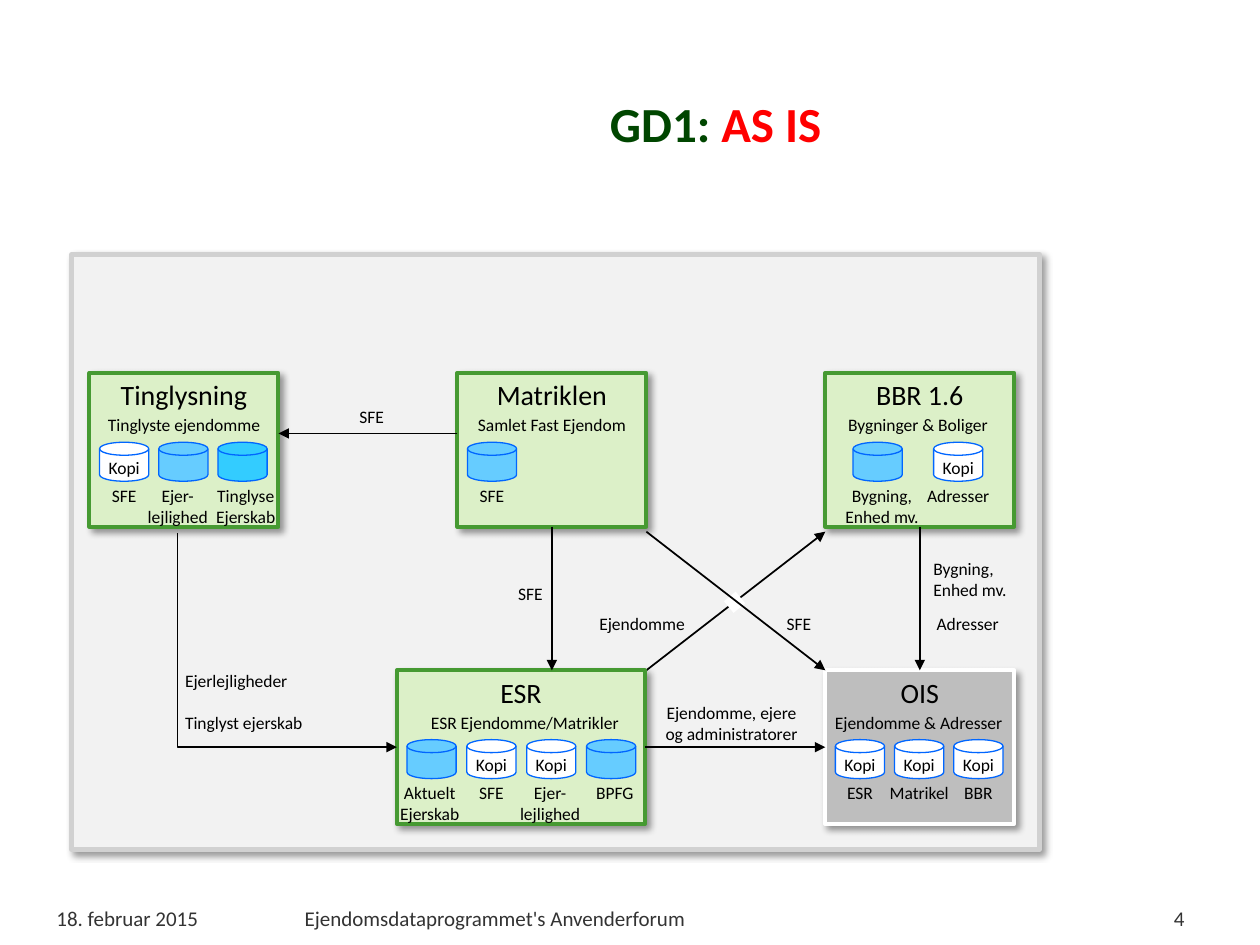
from dataclasses import dataclass
from typing import Any, Optional

import pptx
import pptx.dml.color
import pptx.enum.shapes
import pptx.enum.text
import pptx.oxml
import pptx.oxml.ns
import pptx.util
from lxml import etree

COLORS = {
    "black": "000000", "white": "FFFFFF", "panel": "F2F2F2", "panel_edge": "D1D1D1",
    "green": "DCF0C8", "green_edge": "469A32", "gray": "BEBEBE", "blue": "66CCFF",
    "cyan": "33CCFF", "store_edge": "0066FF", "title": "004600", "red": "FF0000",
    "footer": "333333",
}
COLUMNS, ROWS = 100, 75
SHAPE = pptx.enum.shapes.MSO_SHAPE
ALIGN = pptx.enum.text.PP_ALIGN
ANCHOR = pptx.enum.text.MSO_ANCHOR
qn = pptx.oxml.ns.qn

presentation = pptx.Presentation()
presentation.slide_width = pptx.util.Inches(10)
presentation.slide_height = pptx.util.Inches(7.5)
slide = presentation.slides.add_slide(presentation.slide_layouts[6])


@dataclass
class Store:
    label: str
    width: float
    fill: str = "white"
    shift: float = 0


@dataclass
class System:
    name: str
    subtitle: str
    column: float
    row: float
    subtitle_width: float
    stores: list[Store]
    width: float = 15
    first: float = 2.75
    pitch: float = 4.7
    subtitle_shift: float = 0
    fill: str = "green"
    edge: str = "green_edge"


@dataclass
class Label:
    text: str
    column: float
    row: float
    width: float
    align: Any = ALIGN.CENTER
    gap: float = 0


@dataclass
class Flow:
    begin: tuple[float, float]
    end: tuple[float, float]
    source: Optional[tuple[str, int]] = None
    target: Optional[tuple[str, int]] = None


def x(columns: float) -> int:
    return round(presentation.slide_width * columns / COLUMNS)


def y(rows: float) -> int:
    return round(presentation.slide_height * rows / ROWS)


def rgb(name: str) -> pptx.dml.color.RGBColor:
    return pptx.dml.color.RGBColor.from_string(COLORS[name])


def apply_format(target: Any, values: dict[str, Any]) -> None:
    for name, value in values.items():
        setattr(target, name, value)


def write(shape: Any, text: str, size: float = 10, color: str = "black",
          align: Any = ALIGN.CENTER, bold: bool = False, gap: float = 0) -> None:
    for index, line in enumerate(text.split("\n")):
        frame = shape.text_frame
        paragraph = frame.add_paragraph() if index else frame.paragraphs[0]
        paragraph.alignment = align
        if index and gap:
            paragraph.space_before = pptx.util.Pt(gap)
        add_run(paragraph, line, size, color, bold)


def add_run(paragraph: Any, text: str, size: float, color: str, bold: bool) -> None:
    run = paragraph.add_run()
    run.text = text
    apply_format(run.font, {"name": "Calibri", "size": pptx.util.Pt(size), "bold": bold})
    run.font.color.rgb = rgb(color)


def add_box(kind: Any, column: float, row: float, width: float, height: float, fill: str,
            edge: Optional[str] = None, weight: float = 0, shadow: bool = False) -> Any:
    shape = slide.shapes.add_shape(kind, x(column), y(row), x(width), y(height))
    shape.fill.solid()
    shape.fill.fore_color.rgb = rgb(fill)
    if edge:
        shape.line.color.rgb = rgb(edge)
        shape.line.width = pptx.util.Pt(weight)
    else:
        shape.line.fill.background()
    shape.shadow.inherit = False
    if shadow:
        effects = shape.element.spPr.find(qn("a:effectLst"))
        outer = etree.SubElement(effects, qn("a:outerShdw"), blurRad="50800", dist="38100",
                                 dir="2700000", algn="tl", rotWithShape="0")
        color = etree.SubElement(outer, qn("a:srgbClr"), val=COLORS["black"])
        etree.SubElement(color, qn("a:alpha"), val="40000")
    apply_format(shape.text_frame, {
        "word_wrap": False, "margin_left": 0, "margin_right": 0, "margin_bottom": 0,
        "margin_top": y(0.4), "vertical_anchor": ANCHOR.TOP})
    return shape


def add_text(column: float, row: float, width: float, height: float, wrap: bool = False) -> Any:
    shape = slide.shapes.add_textbox(x(column), y(row), x(width), y(height))
    shape.text_frame.word_wrap = wrap
    return shape


def draw_label(label: Label) -> None:
    lines = label.text.count("\n") + 1
    height = 1 + 1.7 * (lines + bool(label.gap))
    shape = add_text(label.column, label.row, label.width, height)
    shape.text_frame.auto_size = pptx.enum.text.MSO_AUTO_SIZE.SHAPE_TO_FIT_TEXT
    write(shape, label.text, align=label.align, gap=label.gap)


def draw_system(system: System) -> Any:
    box = add_box(SHAPE.RECTANGLE, system.column, system.row, system.width, 12.2,
                  system.fill, system.edge, 2.25, True)
    write(box, system.name, 16)
    middle = system.column + system.width / 2 + system.subtitle_shift
    draw_label(Label(system.subtitle, middle - system.subtitle_width / 2, system.row + 2.8,
                     system.subtitle_width))
    for index, store in enumerate(system.stores):
        center = system.column + system.first + index * system.pitch
        disk = add_box(SHAPE.FLOWCHART_MAGNETIC_DISK, center - 1.95, system.row + 5.5, 3.9, 3.1,
                       store.fill, "store_edge", 0.75)
        if store.fill == "white":
            disk.text_frame.vertical_anchor = ANCHOR.MIDDLE
            write(disk, "Kopi")
        draw_label(Label(store.label, center + store.shift - store.width / 2,
                         system.row + 8.4, store.width))
    return box


def style_arrow(connector: Any) -> None:
    connector.line.color.rgb = rgb("black")
    connector.line.width = pptx.util.Pt(1)
    etree.SubElement(connector.line._get_or_add_ln(), qn("a:tailEnd"), type="triangle")
    etree.SubElement(connector.element.spPr, qn("a:effectLst"))


def draw_flow(flow: Flow, boxes: dict[str, Any]) -> None:
    connector = slide.shapes.add_connector(
        pptx.enum.shapes.MSO_CONNECTOR.STRAIGHT,
        x(flow.begin[0]), y(flow.begin[1]), x(flow.end[0]), y(flow.end[1]))
    if flow.source:
        connector.begin_connect(boxes[flow.source[0]], flow.source[1])
    if flow.target:
        connector.end_connect(boxes[flow.target[0]], flow.target[1])
    style_arrow(connector)


def draw_corner_flow() -> None:
    connector = slide.shapes.add_connector(
        pptx.enum.shapes.MSO_CONNECTOR.ELBOW, x(14.3), y(42.1), x(31.3), y(59.5))
    properties = connector.element.spPr
    properties.find(qn("a:prstGeom")).set("prst", "bentConnector2")
    for name, value in {"rot": "16200000", "flipH": "1"}.items():
        properties.find(qn("a:xfrm")).set(name, value)
    style_arrow(connector)


SYSTEMS = [
    System("Tinglysning", "Tinglyste ejendomme", 7.1, 29.6, 14.3, [
        Store("SFE", 4), Store("Ejer-\nlejlighed", 6.8, "blue", -0.45),
        Store("Tinglyse\nEjerskab", 6.8, "cyan", 0.25)]),
    System("Matriklen", "Samlet Fast Ejendom", 36.3, 29.6, 14.4, [Store("SFE", 4, "blue")]),
    System("OIS", "Ejendomme & Adresser", 65.5, 53.2, 16, [
        Store("ESR", 4.1), Store("Matrikel", 6.8), Store("BBR", 4.3)],
        fill="gray", edge="white", subtitle_shift=-0.1),
    System("BBR 1.6", "Bygninger & Boliger", 65.5, 29.6, 13.3, [
        Store("Bygning,\nEnhed mv.", 8, "blue", 0.35), Store("Adresser", 7)],
        first=4.15, pitch=6.4, subtitle_shift=-0.15),
    System("ESR", "ESR Ejendomme/Matrikler", 31.5, 53.2, 17.1, [
        Store("Aktuelt\nEjerskab", 6.8, "blue", -0.15), Store("SFE", 4),
        Store("Ejer-\nlejlighed", 6.8, shift=-0.1), Store("BPFG", 5, "blue", 0.3)],
        width=19.7, pitch=4.75, subtitle_shift=0.3),
]
FLOWS = [
    Flow((36.3, 34.4), (22.1, 34.4)),
    Flow((43.8, 41.8), (43.8, 53.2), source=("Matriklen", 2)),
    Flow((73, 41.8), (73, 53.2), ("BBR 1.6", 2), ("OIS", 0)),
    Flow((51.3, 42.2), (65.5, 53.2)),
    Flow((51.2, 59.3), (65.5, 59.3), ("ESR", 3), ("OIS", 1)),
]
LABELS = [
    Label("Ejerlejligheder\nTinglyst ejerskab", 13.7, 52.7, 11.5, ALIGN.LEFT, 12),
    Label("SFE", 27.5, 31.7, 4),
    Label("SFE", 40.1, 45.8, 4),
    Label("SFE", 61.4, 48.2, 4),
    Label("Adresser", 73.3, 48.2, 7),
    Label("Bygning,\nEnhed mv.", 73.1, 43.8, 8, ALIGN.LEFT),
    Label("Ejendomme", 46.5, 48.2, 8.9),
    Label("Ejendomme, ejere\nog administratorer", 51.6, 55.2, 12.9),
]
FOOTERS = [
    Label("18. februar 2015", 3.5, 71.4, 23.7, ALIGN.LEFT),
    Label("Ejendomsdataprogrammet's Anvenderforum", 23.2, 71.4, 62.2, ALIGN.LEFT),
    Label("4", 87.8, 71.4, 7.2, ALIGN.RIGHT),
]

add_box(SHAPE.RECTANGLE, 5.7, 20.2, 76.8, 47.2, "panel", "panel_edge", 3, True)
draw_flow(Flow((51.3, 53.2), (65.5, 42.2)), {})
add_box(SHAPE.RECTANGLE, 57.7, 47.2, 1.2, 1.2, "white").rotation = 50.6
boxes = {system.name: draw_system(system) for system in SYSTEMS}
for flow in FLOWS:
    draw_flow(flow, boxes)
draw_corner_flow()
for label in LABELS:
    draw_label(label)

title = add_text(11.8, 6.6, 90, 6.3, True)
title.text_frame.vertical_anchor = ANCHOR.MIDDLE
write(title, "GD1: ", 28, "title", bold=True)
add_run(title.text_frame.paragraphs[0], "AS IS", 28, "red", True)
for footer in FOOTERS:
    write(add_text(footer.column, footer.row, footer.width, 1.6, True),
          footer.text, 12, "footer", footer.align)

presentation.save("out.pptx")
